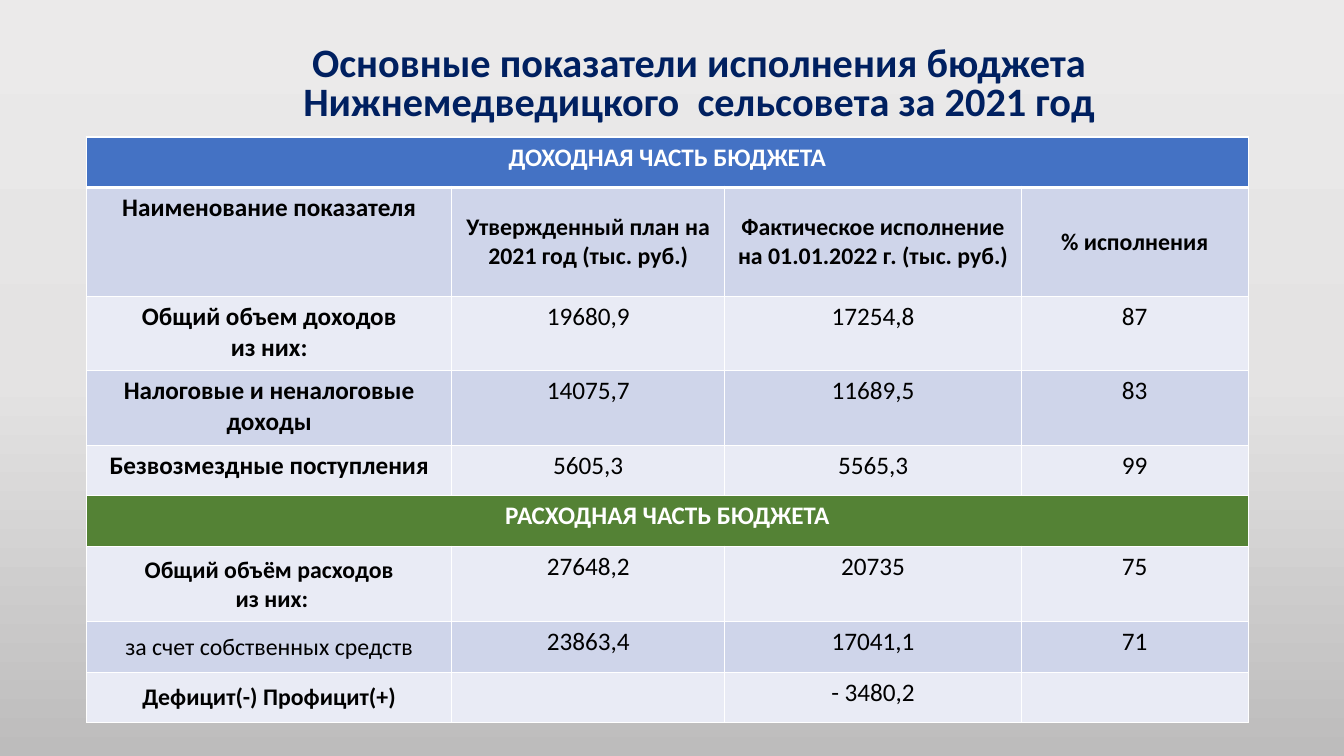
"""Build the slide with the main budget figures for 2021."""
from copy import deepcopy

from pptx import Presentation
from pptx.dml.color import RGBColor
from pptx.enum.text import MSO_ANCHOR, PP_ALIGN
from pptx.oxml import parse_xml
from pptx.oxml.ns import nsdecls, qn
from pptx.util import Inches, Pt

NAVY = RGBColor(0x00, 0x20, 0x60)
BLACK = RGBColor(0x00, 0x00, 0x00)
WHITE = RGBColor(0xFF, 0xFF, 0xFF)
BLUE = RGBColor(0x44, 0x72, 0xC4)
GREEN = RGBColor(0x54, 0x82, 0x35)
DARK = RGBColor(0xCF, 0xD5, 0xEA)
LIGHT = RGBColor(0xE9, 0xEB, 0xF5)
SHADES = [RGBColor(0xEB, 0xEA, 0xEA), RGBColor(0xE4, 0xE3, 0xE3), RGBColor(0xBD, 0xBC, 0xBC)]

WIDTHS = [3.62, 2.71, 2.94, 2.25]
HEIGHTS = [0.5, 1.08, 0.74, 0.74, 0.5, 0.5, 0.75, 0.5, 0.5]
BANDS = {0: BLUE, 5: GREEN}
ROWS = [
    ["ДОХОДНАЯ ЧАСТЬ БЮДЖЕТА"],
    ["Наименование показателя", "Утвержденный план на 2021 год (тыс. руб.)",
     "Фактическое исполнение на 01.01.2022 г. (тыс. руб.)", "% исполнения"],
    ["Общий объем доходов\nиз них:", "19680,9", "17254,8", "87"],
    ["Налоговые и неналоговые доходы", "14075,7", "11689,5", "83"],
    ["Безвозмездные поступления", "5605,3", "5565,3", "99"],
    ["РАСХОДНАЯ ЧАСТЬ БЮДЖЕТА"],
    ["Общий объём расходов\n из них:", "27648,2", "20735", "75"],
    ["за счет собственных средств", "23863,4", "17041,1", "71"],
    ["Дефицит(-) Профицит(+)", "", "- 3480,2", ""],
]


def write(frame, text, size, color, bold):
    for i, line in enumerate(text.split("\n")):
        para = frame.paragraphs[0] if i == 0 else frame.add_paragraph()
        para.alignment = PP_ALIGN.CENTER
        para.font.size = Pt(size)
        if line:
            run = para.add_run()
            run.text = line
            font = run.font
            font.name, font.size, font.bold = "Calibri", Pt(size), bold
            font.color.rgb = color


def edge(cell, side, width):
    cell._tc.get_or_add_tcPr().append(parse_xml(
        f'<a:ln{side} {nsdecls("a")} w="{Pt(width)}"><a:solidFill>'
        f'<a:srgbClr val="{WHITE}"/></a:solidFill></a:ln{side}>'))


deck = Presentation()
deck.slide_width, deck.slide_height = Inches(13.33), Inches(7.5)
slide = deck.slides.add_slide(deck.slide_layouts[6])

fill = slide.background.fill
fill.gradient()
fill.gradient_angle = 270
stops = next(slide._element.iter(qn("a:gsLst")))
stops.insert(1, deepcopy(stops[0]))
for stop, shade, pos in zip(fill.gradient_stops, SHADES, [0, 0.5, 1]):
    stop.color.rgb = shade
    stop.position = pos

title = slide.shapes.add_textbox(Inches(0.91), Inches(0.33), Inches(11.5), Inches(0.95))
frame = title.text_frame
frame.word_wrap = True
frame.vertical_anchor = MSO_ANCHOR.BOTTOM
frame.margin_left = Inches(0.65)
write(frame, "Основные показатели исполнения бюджета Нижнемедведицкого  сельсовета за 2021 год",
      28.8, NAVY, True)
frame.paragraphs[0].line_spacing = 0.8

table = slide.shapes.add_table(len(ROWS), len(WIDTHS), Inches(0.86), Inches(1.36),
                               Inches(sum(WIDTHS)), Inches(sum(HEIGHTS))).table
for col, width in zip(table.columns, WIDTHS):
    col.width = Inches(width)

for r, texts in enumerate(ROWS):
    table.rows[r].height = Inches(HEIGHTS[r])
    band = r in BANDS
    if band:
        table.cell(r, 0).merge(table.cell(r, len(WIDTHS) - 1))
    for c in range(len(WIDTHS)):
        cell = table.cell(r, c)
        for side in "LRTB":
            thick = (r, side) in [(0, "B"), (1, "T")]
            edge(cell, side, 3 if thick else 1)
        cell.fill.solid()
        cell.fill.fore_color.rgb = BANDS[r] if band else DARK if r % 2 else LIGHT
        if c >= len(texts):
            continue
        small = (r == 1 and c > 0) or (r > 5 and c == 0)
        if small:
            cell.vertical_anchor = MSO_ANCHOR.MIDDLE
            cell.margin_left = cell.margin_right = Inches(0.09)
            cell.margin_top = cell.margin_bottom = Inches(0.09)
        bold = r == 1 or (c == 0 and r != 7)
        write(cell.text_frame, texts[c], 17 if small else 18, WHITE if band else BLACK, bold)

deck.save("out.pptx")
